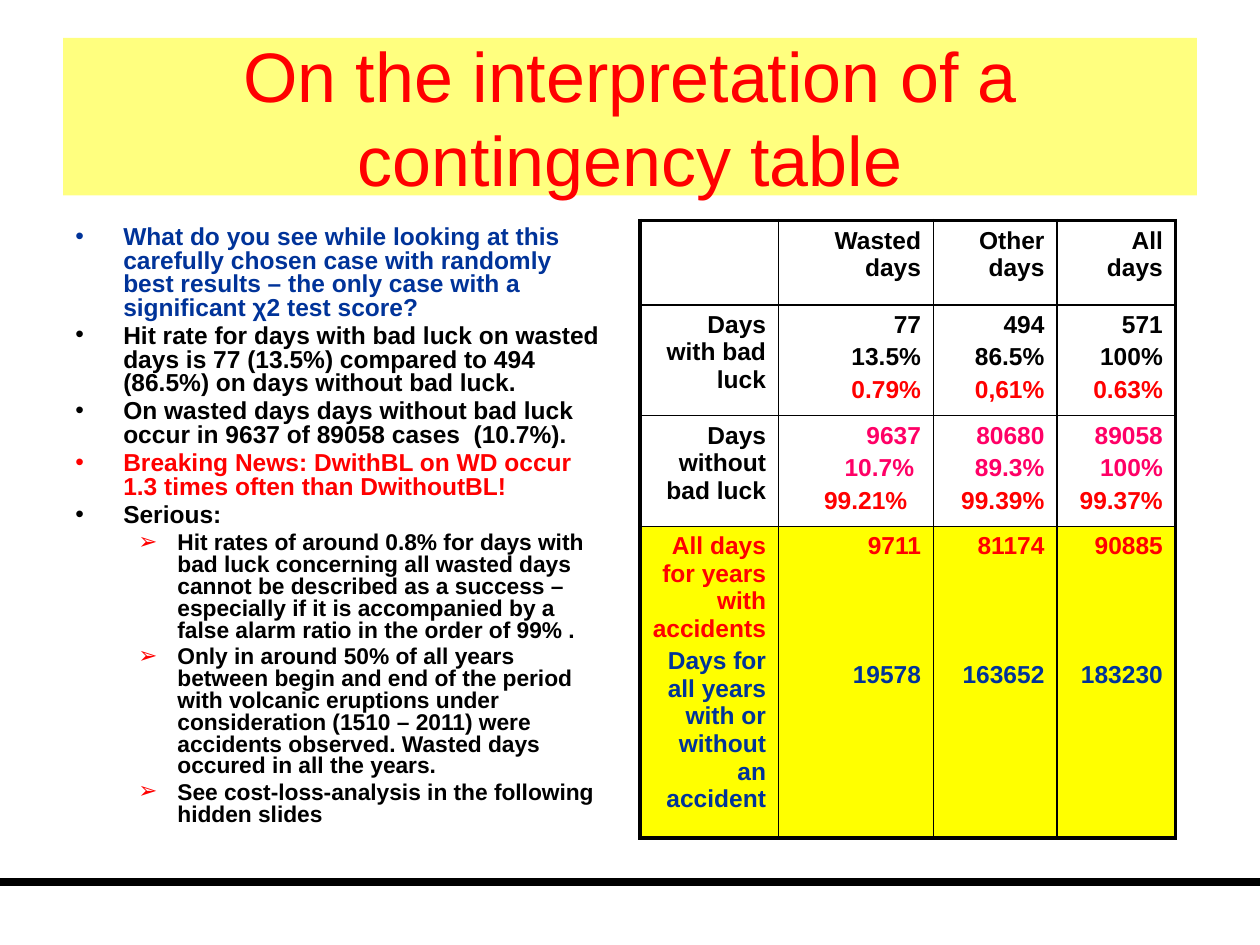
from lxml.etree import SubElement
from pptx import Presentation
from pptx.dml.color import RGBColor
from pptx.enum.shapes import MSO_CONNECTOR
from pptx.enum.text import MSO_ANCHOR, MSO_AUTO_SIZE, PP_ALIGN
from pptx.oxml.ns import qn
from pptx.util import Inches, Pt

BLACK, WHITE, RED = "000000", "FFFFFF", "FF0000"
BLUE, PINK, YELLOW = "003399", "FF0066", "FFFF00"

TITLE = "On the interpretation of a contingency table"
POINTS = [  # level, colour, text
    (0, BLUE, "What do you see while looking at this carefully chosen case with randomly "
              "best results – the only case with a significant χ2 test score?"),
    (0, BLACK, "Hit rate for days with bad luck on wasted days is 77 (13.5%) compared to 494 "
               "(86.5%) on days without bad luck."),
    (0, BLACK, "On wasted days days without bad luck occur in 9637 of 89058 cases  (10.7%)."),
    (0, RED, "Breaking News: DwithBL on WD occur 1.3 times often than DwithoutBL!"),
    (0, BLACK, "Serious:"),
    (1, BLACK, "Hit rates of around 0.8% for days with bad luck concerning all wasted days cannot "
               "be described as a success – especially if it is accompanied by a false alarm "
               "ratio in the order of 99% ."),
    (1, BLACK, "Only in around 50% of all years between begin and end of the period with volcanic "
               "eruptions under consideration (1510 – 2011) were accidents observed. Wasted days "
               "occured in all the years."),
    (1, BLACK, "See cost-loss-analysis in the following hidden slides"),
]
LEVELS = [  # left margin, hanging indent, size, bullet, bullet colour
    (0.38, 0.38, 14, "•", None),
    (0.81, 0.31, 13, "➢", RED),
]

COLUMN_WIDTHS = [1.1, 1.23, 0.98, 0.94]
# row height, fill, label colours, value colours, space before later values, cells
ROWS = [
    (0.67, WHITE, [BLACK], [BLACK], 0,
     [[], ["Wasted days"], ["Other days"], ["All days"]]),
    (0.83, WHITE, [BLACK], [BLACK, BLACK, RED], 2.8,
     [["Days with bad luck"], ["77", "13.5%", "0.79%"], ["494", "86.5%", "0,61%"],
      ["571", "100%", "0.63%"]]),
    (0.83, WHITE, [BLACK], [PINK, PINK, RED], 2.8,
     [["Days without bad luck"], ["9637", "10.7% ", "99.21%  "], ["80680", "89.3%", "99.39%"],
      ["89058", "100%", "99.37%"]]),
    (2.33, YELLOW, [RED, BLUE], [RED, BLUE], 58,
     [["All days for years with accidents", "Days for all years with or without an accident"],
      ["9711", "19578"], ["81174", "163652"], ["90885", "183230"]]),
]
LABEL_GAP = 2.8


def rgb(colour):
    return RGBColor.from_string(colour)


def set_font(paragraph, size, colour, bold=True):
    font = paragraph.font
    font.name, font.size, font.bold = "Arial", Pt(size), bold
    font.color.rgb = rgb(colour)


def next_paragraph(frame, index):
    return frame.paragraphs[0] if index == 0 else frame.add_paragraph()


def add_bullet(paragraph, margin, hanging, character, colour):
    properties = paragraph._p.get_or_add_pPr()
    properties.set("marL", str(Inches(margin)))
    properties.set("indent", str(-Inches(hanging)))
    if colour:
        bullet_colour = SubElement(properties, qn("a:buClr"))
        SubElement(bullet_colour, qn("a:srgbClr"), val=colour)
    SubElement(properties, qn("a:buFont"), typeface="Arial")
    SubElement(properties, qn("a:buChar"), char=character)


def add_title(slide):
    title = slide.shapes.title
    title.left, title.top, title.width, title.height = map(Inches, (0.5, 0.3, 9, 1.25))
    title.fill.solid()
    title.fill.fore_color.rgb = rgb(YELLOW)
    fill_colour = title._element.spPr.find(qn("a:solidFill"))[0]
    SubElement(fill_colour, qn("a:alpha"), val="50000")
    frame = title.text_frame
    frame.text = TITLE
    frame.word_wrap = True
    frame.auto_size = MSO_AUTO_SIZE.NONE
    frame.vertical_anchor = MSO_ANCHOR.MIDDLE
    paragraph = frame.paragraphs[0]
    paragraph.alignment = PP_ALIGN.CENTER
    paragraph.line_spacing = 1.0
    set_font(paragraph, 40, RED, bold=False)


def add_points(slide):
    box = slide.shapes.add_textbox(*map(Inches, (0.5, 1.75, 4.42, 4.95)))
    frame = box.text_frame
    frame.word_wrap = True
    for index, (level, colour, text) in enumerate(POINTS):
        margin, hanging, size, character, bullet_colour = LEVELS[level]
        paragraph = next_paragraph(frame, index)
        paragraph.text = text
        paragraph.level = level
        add_bullet(paragraph, margin, hanging, character, bullet_colour)
        paragraph.line_spacing = 0.8
        if index:
            paragraph.space_before = Pt(0.2 * size)
        set_font(paragraph, size, colour)


def set_borders(cell, row, column):
    """Draw thick edges around the table and thin ones inside it."""
    outer = {"a:lnL": column == 0, "a:lnR": column == len(COLUMN_WIDTHS) - 1,
             "a:lnT": row == 0, "a:lnB": row == len(ROWS) - 1}
    properties = cell._tc.get_or_add_tcPr()
    for position, (tag, is_outer) in enumerate(outer.items()):
        line = SubElement(properties, qn(tag), w=str(Pt(2.25 if is_outer else 1)))
        SubElement(SubElement(line, qn("a:solidFill")), qn("a:srgbClr"), val=BLACK)
        properties.insert(position, line)


def add_contingency_table(slide):
    height = sum(row[0] for row in ROWS)
    frame = slide.shapes.add_table(len(ROWS), len(COLUMN_WIDTHS), Inches(5.08), Inches(1.75),
                                   Inches(sum(COLUMN_WIDTHS)), Inches(height))
    table = frame.table
    for column, width in zip(table.columns, COLUMN_WIDTHS):
        column.width = Inches(width)
    for row, (height, fill, label_colours, value_colours, value_gap, cells) in enumerate(ROWS):
        table.rows[row].height = Inches(height)
        for column, lines in enumerate(cells):
            cell = table.cell(row, column)
            cell.fill.solid()
            cell.fill.fore_color.rgb = rgb(fill)
            set_borders(cell, row, column)
            colours, gap = (value_colours, value_gap) if column else (label_colours, LABEL_GAP)
            for index, (text, colour) in enumerate(zip(lines, colours)):
                paragraph = next_paragraph(cell.text_frame, index)
                paragraph.text = text
                paragraph.alignment = PP_ALIGN.RIGHT
                if index:
                    paragraph.space_before = Pt(gap)
                set_font(paragraph, 14, colour)


def add_footer_line(slide):
    line = slide.shapes.add_connector(MSO_CONNECTOR.STRAIGHT, 0, Inches(7), Inches(10), Inches(7))
    line.line.color.rgb = rgb(BLACK)
    line.line.width = Pt(5)
    SubElement(line._element.spPr, qn("a:effectLst"))


def main():
    presentation = Presentation()
    presentation.slide_width, presentation.slide_height = Inches(10), Inches(7.5)
    slide = presentation.slides.add_slide(presentation.slide_layouts[5])
    add_title(slide)
    add_points(slide)
    add_contingency_table(slide)
    add_footer_line(slide)
    presentation.save("out.pptx")


if __name__ == "__main__":
    main()
